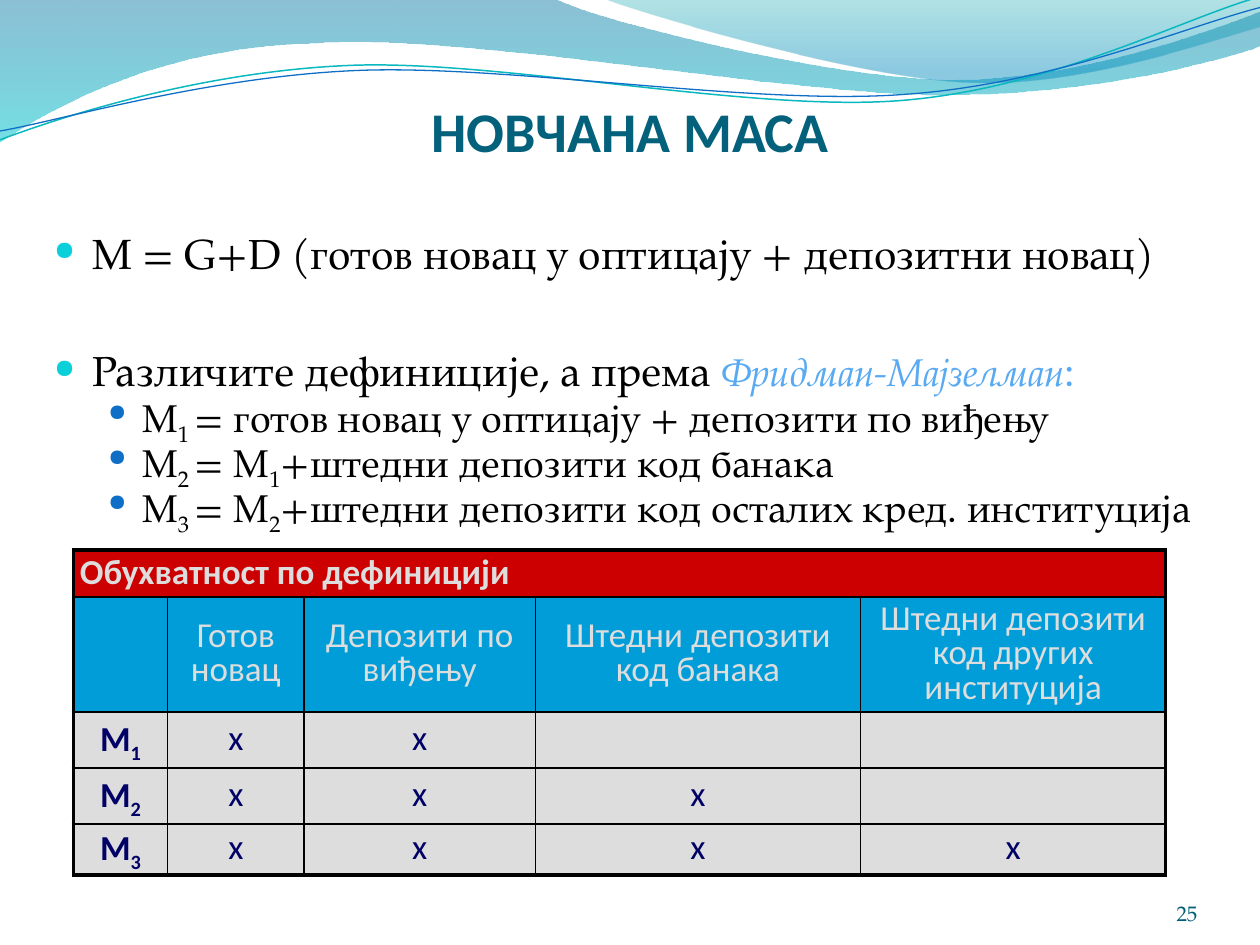
from lxml.etree import SubElement
from pptx import Presentation
from pptx.dml.color import RGBColor
from pptx.enum.text import MSO_ANCHOR, PP_ALIGN
from pptx.oxml.ns import qn
from pptx.util import Cm, Pt

NAVY = RGBColor(0x00, 0x00, 0x66)
BLACK = RGBColor(0x00, 0x00, 0x00)
TITLE_TEAL = RGBColor(0x04, 0x61, 0x7B)
NUMBER_TEAL = RGBColor(0x04, 0x5D, 0x75)
SKY = RGBColor(0x59, 0xAA, 0xF2)
BULLET_CYAN = RGBColor(0x0B, 0xD0, 0xD9)
BLUE = RGBColor(0x0F, 0x6F, 0xC6)
LINE_CYAN = RGBColor(0x0A, 0xB8, 0xBF)
HEADER_RED = RGBColor(0xCC, 0x00, 0x00)
HEADER_BLUE = RGBColor(0x00, 0x9D, 0xD9)
GREY = RGBColor(0xDD, 0xDD, 0xDD)
WAVE_BLUE = RGBColor(0x00, 0x74, 0xA1)
WAVE_CYAN = RGBColor(0x00, 0xC6, 0xCF)
CREST_GREEN = RGBColor(0x00, 0xA1, 0xA9)
CREST_BLUE = RGBColor(0x00, 0x8B, 0xBF)
SERIF, SANS = "TeX Gyre Pagella", "Calibri"
INCH = 2.54

LEFT_WAVE = [
    (0, 0), (4.4, -0.01), (4.76, 0.17, 6.64, 0.63, 7.58, 0.63),
    (8.53, 0.63, 9.58, 0.26, 10, 0.09), (10.01, 0.36),
    (9.83, 0.44, 8.7, 0.76, 7.46, 0.75), (6.22, 0.75, 3.82, 0.28, 2.57, 0.34),
    (1.29, 0.36, 0.46, 0.83, -0.01, 1.13),
]
RIGHT_CREST = [
    (4.79, -0.01), (5.09, 0.11, 6.82, 0.62, 7.69, 0.65),
    (8.56, 0.69, 9.61, 0.32, 10, 0.21), (10, 0),
]
CYAN_CURVE = [
    (0, 1.11), (0.48, 0.93, 1.58, 0.57, 2.77, 0.52),
    (3.95, 0.47, 5.93, 0.89, 7.13, 0.8), (8.33, 0.71, 9.38, 0.15, 9.98, -0.02),
]
BLUE_CURVE = [
    (0, 1.04), (0.47, 0.96, 1.64, 0.61, 2.83, 0.56),
    (4.03, 0.51, 5.97, 0.84, 7.17, 0.75), (8.36, 0.67, 9.41, 0.21, 10, 0.06),
]
DEFINITIONS = [
    [("М", 0), ("1 ", 1), ("= готов новац у оптицају + депозити по виђењу", 0)],
    [("М", 0), ("2 ", 1), ("= М", 0), ("1", 1), ("+штедни депозити код банака", 0)],
    [("М", 0), ("3 ", 1), ("= М", 0), ("2", 1),
     ("+штедни депозити код осталих кред. институција", 0)],
]
TABLE_TITLE = "Обухватност по дефиницији"
COLUMN_HEADS = ["", "Готов новац", "Депозити по виђењу", "Штедни депозити код банака",
                "Штедни депозити код других институција"]
COLUMN_WIDTHS = [1.9, 2.75, 4.66, 6.56, 6.15]
ROW_HEIGHTS = [0.94, 2.32, 1.13, 1.13, 1.01]


def add_outline(slide, segments, closed):
    """Draw a freeform of straight and cubic segments, given in inches."""
    points = [(Cm(x * INCH), Cm(y * INCH))
              for segment in segments for x, y in zip(segment[::2], segment[1::2])]
    builder = slide.shapes.build_freeform(*points[0])
    builder.add_line_segments(points[1:], close=closed)
    outline = builder.convert_to_shape()
    outline.shadow.inherit = False
    straights = iter(list(outline._element.iter(qn("a:lnTo"))))
    for segment in segments[1:]:
        first = next(straights)
        if len(segment) == 6:
            cubic = first.makeelement(qn("a:cubicBezTo"))
            first.addprevious(cubic)
            for straight in (first, next(straights), next(straights)):
                cubic.append(straight[0])
                straight.getparent().remove(straight)
    return outline


def add_wave(slide, segments, stops):
    """Draw a closed wave filled from top to bottom with translucent stops."""
    wave = add_outline(slide, segments, True)
    wave.line.fill.background()
    wave.fill.gradient()
    wave.fill.gradient_angle = 270
    for stop, (position, color, _) in zip(wave.fill.gradient_stops, stops):
        stop.position = position
        stop.color.rgb = color
    for tint, (_, _, opacity) in zip(wave._element.iter(qn("a:srgbClr")), stops):
        SubElement(tint, qn("a:alpha"), val=str(opacity * 1000))


def add_curve(slide, segments, color, width):
    """Draw an open curved line."""
    curve = add_outline(slide, segments, False)
    curve.fill.background()
    curve.line.color.rgb = color
    curve.line.width = Pt(width)


def write(paragraph, text, *, size, color, font=SERIF, bold=False, italic=False, sub=False):
    """Append a formatted run to a paragraph."""
    run = paragraph.add_run()
    run.text = text
    run.font.name, run.font.size = font, Pt(size)
    run.font.bold, run.font.italic = bold, italic
    run.font.color.rgb = color
    if sub:
        run._r.get_or_add_rPr().set("baseline", "-25000")


def add_text_frame(slide, left, top, width, height, anchor, side=0.0, edge=0.0):
    """Add a wrapping text box and return its frame."""
    frame = slide.shapes.add_textbox(Cm(left), Cm(top), Cm(width), Cm(height)).text_frame
    frame.word_wrap = True
    frame.vertical_anchor = anchor
    frame.margin_left = frame.margin_right = Cm(side)
    frame.margin_top = frame.margin_bottom = Cm(edge)
    return frame


def set_bullet(paragraph, color, percent, margin, hanging):
    """Give a paragraph a coloured round bullet and a hanging indent."""
    properties = paragraph._p.get_or_add_pPr()
    properties.set("marL", str(Cm(margin)))
    properties.set("indent", str(-Cm(hanging)))
    tint = SubElement(properties, qn("a:buClr"))
    SubElement(tint, qn("a:srgbClr"), val=str(color))
    SubElement(properties, qn("a:buSzPct"), val=str(percent * 1000))
    SubElement(properties, qn("a:buChar"), char="●")


def add_body(slide):
    """Write the formula and the bulleted definitions of money supply."""
    frame = add_text_frame(slide, 0.84, 4.45, 24.56, 6.1, MSO_ANCHOR.TOP, 0.25, 0.13)
    formula, intro = frame.paragraphs[0], frame.add_paragraph()
    intro.space_before = Pt(38.5)
    for paragraph in (formula, intro):
        set_bullet(paragraph, BULLET_CYAN, 63, 0.77, 0.77)
    write(formula, "M = G+D (готов новац у оптицају + депозитни новац)", size=24, color=BLACK)
    write(intro, "Различите дефиниције, а према ", size=24, color=BLACK)
    write(intro, "Фридман-Мајзелман", size=22.2, color=SKY, italic=True)
    write(intro, ":", size=24, color=SKY)
    for definition in DEFINITIONS:
        paragraph = frame.add_paragraph()
        paragraph.level = 1
        paragraph.line_spacing = 0.7
        paragraph.space_before = Pt(4.5)
        set_bullet(paragraph, BLUE, 60, 1.78, 0.69)
        for text, sub in definition:
            write(paragraph, text, size=22.2, color=BLACK, sub=bool(sub))


def set_borders(cell, **widths):
    """Draw black cell borders of the given widths in points."""
    properties = cell._tc.get_or_add_tcPr()
    for index, side in enumerate("LRTB"):
        border = SubElement(properties, qn("a:ln" + side), w=str(Pt(widths[side])))
        SubElement(SubElement(border, qn("a:solidFill")), qn("a:srgbClr"), val=str(BLACK))
        properties.insert(index, border)


def fill_cell(cell, runs, fill, color, bold=False, align=PP_ALIGN.CENTER):
    """Fill a cell and write its runs, the second one as subscript."""
    cell.fill.solid()
    cell.fill.fore_color.rgb = fill
    cell.vertical_anchor = MSO_ANCHOR.MIDDLE
    cell.margin_left = cell.margin_right = cell.margin_top = cell.margin_bottom = Cm(0.13)
    paragraph = cell.text_frame.paragraphs[0]
    paragraph.alignment = align
    paragraph.line_spacing = 0.8
    for index, text in enumerate(filter(None, runs)):
        write(paragraph, text, size=20, color=color, font=SANS, bold=bold, sub=index > 0)


def add_coverage_table(slide):
    """Add the table of what each definition covers."""
    rows, columns = len(ROW_HEIGHTS), len(COLUMN_WIDTHS)
    table = slide.shapes.add_table(
        rows, columns, Cm(1.48), Cm(11.09), Cm(sum(COLUMN_WIDTHS)), Cm(sum(ROW_HEIGHTS))).table
    table.first_row = table.horz_banding = False
    for column, width in zip(table.columns, COLUMN_WIDTHS):
        column.width = Cm(width)
    for row, height in zip(table.rows, ROW_HEIGHTS):
        row.height = Cm(height)
    table.cell(0, 0).merge(table.cell(0, columns - 1))
    fill_cell(table.cell(0, 0), [TABLE_TITLE], HEADER_RED, GREY, True, PP_ALIGN.LEFT)
    for c, head in enumerate(COLUMN_HEADS):
        fill_cell(table.cell(1, c), [head], HEADER_BLUE, GREY)
    for level in range(1, 4):
        fill_cell(table.cell(level + 1, 0), ["М", str(level)], GREY, NAVY, True)
        for c in range(1, columns):
            fill_cell(table.cell(level + 1, c), ["x" if c <= level + 1 else ""], GREY, NAVY)
    for r in range(rows):
        for c in range(columns):
            outer = {"L": c == 0, "R": c == columns - 1 or r == 0, "T": r == 0, "B": r == rows - 1}
            set_borders(table.cell(r, c), **{s: 2.25 if o else 1 for s, o in outer.items()})


def main():
    """Build the money supply slide."""
    deck = Presentation()
    deck.slide_width, deck.slide_height = Cm(25.4), Cm(19.05)
    slide = deck.slides.add_slide(deck.slide_layouts[6])
    add_wave(slide, LEFT_WAVE, [(0, WAVE_BLUE, 45), (1, WAVE_CYAN, 55)])
    add_wave(slide, RIGHT_CREST, [(0, CREST_GREEN, 30), (0.8, CREST_BLUE, 45)])
    add_curve(slide, CYAN_CURVE, LINE_CYAN, 0.85)
    add_curve(slide, BLUE_CURVE, BLUE, 0.75)
    number = add_text_frame(slide, 22.02, 17.65, 2.12, 1.02, MSO_ANCHOR.BOTTOM).paragraphs[0]
    number.alignment = PP_ALIGN.RIGHT
    write(number, "25", size=12, color=NUMBER_TEAL)
    title = add_text_frame(slide, 1.27, 1.84, 22.86, 1.6, MSO_ANCHOR.BOTTOM, 0, 0.13).paragraphs[0]
    title.alignment = PP_ALIGN.CENTER
    write(title, "НОВЧАНА МАСА", size=32, color=TITLE_TEAL, font=SANS, bold=True)
    add_body(slide)
    add_coverage_table(slide)
    deck.save("out.pptx")


if __name__ == "__main__":
    main()
